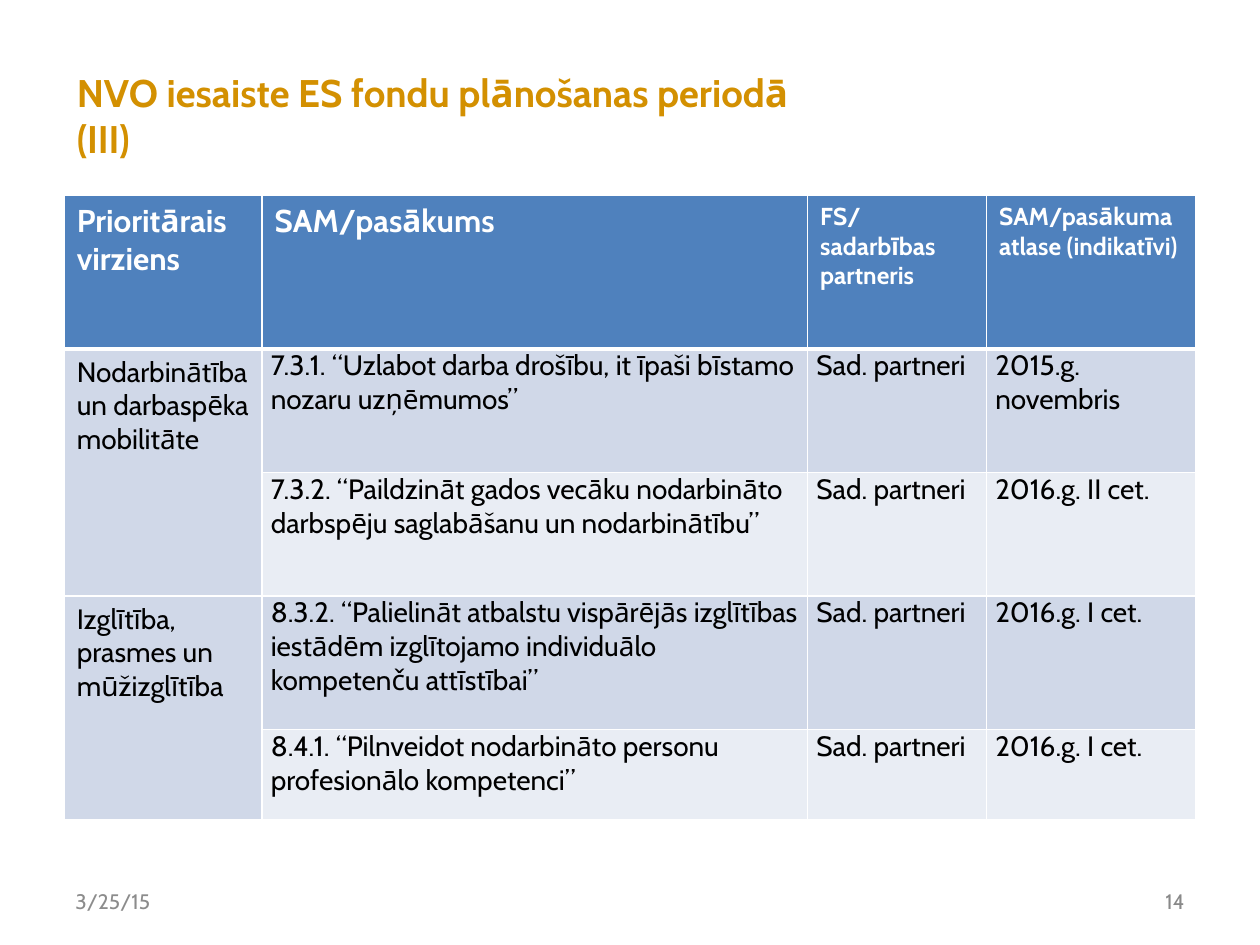
from lxml import etree
from pptx import Presentation
from pptx.dml.color import RGBColor
from pptx.enum import text
from pptx.oxml import ns
from pptx.util import Inches, Pt

GOLD = RGBColor(0xD3, 0x90, 0x01)
DATE_GREY = RGBColor(0x8C, 0x8C, 0x8C)
NUMBER_GREY = RGBColor(0x89, 0x89, 0x89)
WHITE = RGBColor(0xFF, 0xFF, 0xFF)
BLACK = RGBColor(0x00, 0x00, 0x00)
HEADER_BLUE = RGBColor(0x4F, 0x81, 0xBD)
BAND_DARK = RGBColor(0xD0, 0xD8, 0xE8)
BAND_LIGHT = RGBColor(0xE9, 0xED, 0xF4)

HEADERS = ["Prioritārais virziens", "SAM/pasākums",
           "FS/ sadarbības partneris", "SAM/pasākuma atlase (indikatīvi)"]
ROWS = [
    ["Nodarbinātība un darbaspēka mobilitāte",
     "7.3.1. “Uzlabot darba drošību, it īpaši bīstamo nozaru uzņēmumos”",
     "Sad. partneri", "2015.g. novembris"],
    ["",
     "7.3.2. “Paildzināt gados vecāku nodarbināto darbspēju saglabāšanu un nodarbinātību”",
     "Sad. partneri", "2016.g. II cet."],
    ["Izglītība, prasmes un mūžizglītība",
     "8.3.2. “Palielināt atbalstu vispārējās izglītības iestādēm izglītojamo individuālo kompetenču attīstībai”",
     "Sad. partneri", "2016.g. I cet."],
    ["",
     "8.4.1. “Pilnveidot nodarbināto personu profesionālo kompetenci”",
     "Sad. partneri", "2016.g. I cet."],
]


def write(tf, content, size, color, bold=False, align=text.PP_ALIGN.LEFT):
    tf.text = content
    p = tf.paragraphs[0]
    p.alignment = align
    for r in p.runs:
        r.font.name = "Cabin"
        r.font.size = Pt(size)
        r.font.bold = bold
        r.font.color.rgb = color


def add_border(cell, side, width):
    ln = etree.SubElement(cell._tc.get_or_add_tcPr(), ns.qn(f"a:ln{side}"), w=str(Pt(width)))
    fill = etree.SubElement(ln, ns.qn("a:solidFill"))
    etree.SubElement(fill, ns.qn("a:srgbClr"), val=str(WHITE))


prs = Presentation()
prs.slide_width, prs.slide_height = Inches(10), Inches(7.5)
s = prs.slides.add_slide(prs.slide_layouts[5])

title = s.shapes.title
title.left, title.top = Inches(0.51), Inches(0.68)
title.width, title.height = Inches(6.22), Inches(0.47)
tf = title.text_frame
tf.auto_size = text.MSO_AUTO_SIZE.NONE
tf.vertical_anchor = text.MSO_ANCHOR.MIDDLE
write(tf, "NVO iesaiste ES fondu plānošanas periodā (III)", 22, GOLD, True)

for left, content, color, align in [
    (0.5, "3/25/15", DATE_GREY, text.PP_ALIGN.LEFT),
    (7.17, "14", NUMBER_GREY, text.PP_ALIGN.RIGHT),
]:
    tf = s.shapes.add_textbox(Inches(left), Inches(6.95), Inches(2.33), Inches(0.4)).text_frame
    tf.word_wrap = True
    tf.vertical_anchor = text.MSO_ANCHOR.MIDDLE
    write(tf, content, 12, color, align=align)

table = s.shapes.add_table(5, 4, Inches(0.51), Inches(1.55), Inches(8.98), Inches(4.96)).table
for column, width in zip(table.columns, [1.57, 4.33, 1.42, 1.66]):
    column.width = Inches(width)
for row, height in zip(table.rows, [1.22, 0.98, 0.98, 1.06, 0.72]):
    row.height = Inches(height)
for top in (1, 3):
    table.cell(top, 0).merge(table.cell(top + 1, 0))

for i, values in enumerate([HEADERS] + ROWS):
    for j, content in enumerate(values):
        cell = table.cell(i, j)
        header = i == 0
        roomy = header or j == 0
        cell.margin_left = cell.margin_right = Inches(0.1 if roomy else 0.07)
        cell.margin_top = cell.margin_bottom = Inches(0.05 if roomy else 0)
        for side in "LRTB":
            thick = (header and side == "B") or (i == 1 and side == "T")
            add_border(cell, side, 3 if thick else 1)
        cell.fill.solid()
        if header:
            cell.fill.fore_color.rgb = HEADER_BLUE
            write(cell.text_frame, content, 18 if j < 2 else 14, WHITE, True)
        else:
            cell.fill.fore_color.rgb = BAND_DARK if j == 0 or i % 2 else BAND_LIGHT
            if content:
                write(cell.text_frame, content, 16, BLACK)

prs.save("out.pptx")
